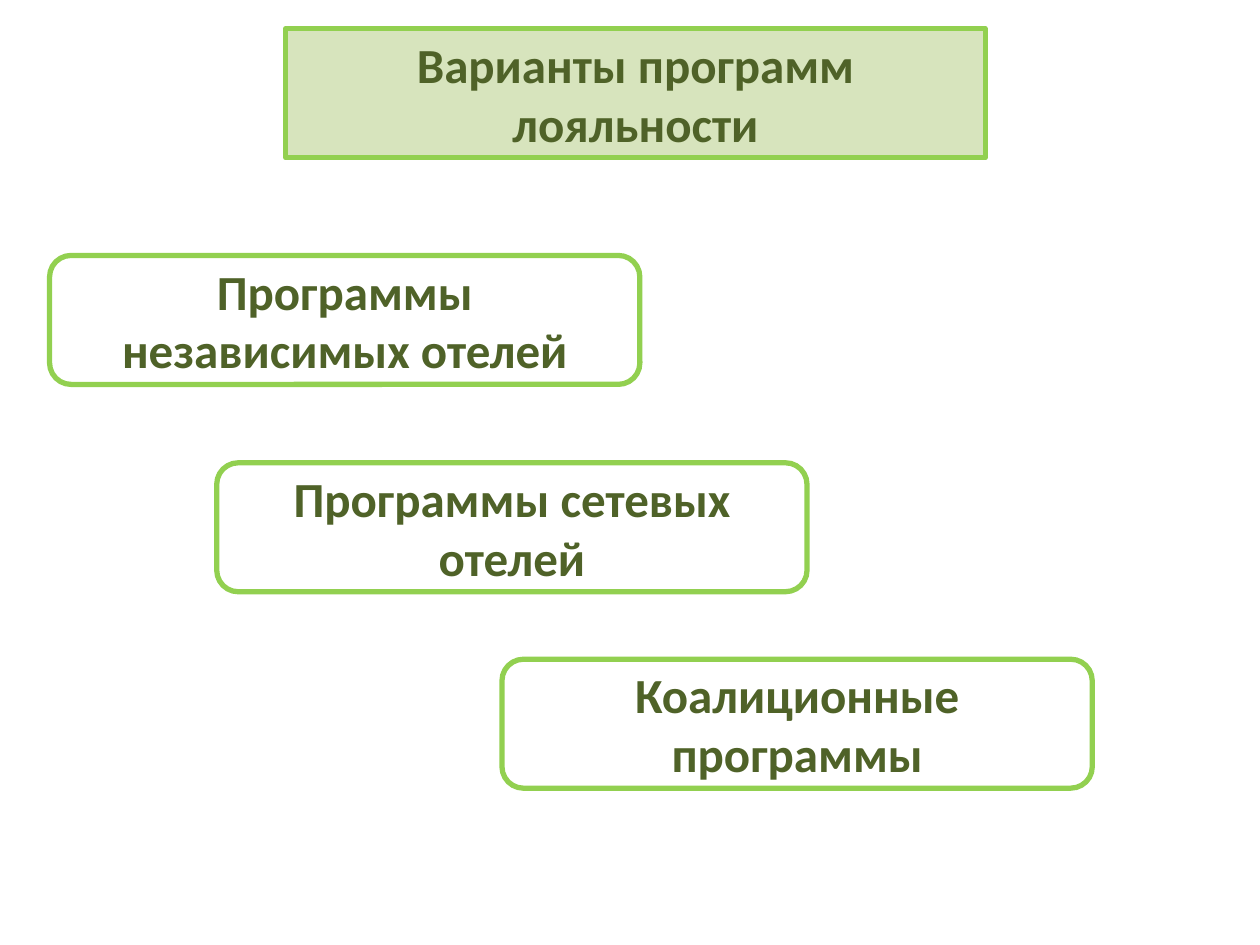
from dataclasses import dataclass

from lxml.etree import SubElement
from pptx import Presentation
from pptx.dml.color import RGBColor
from pptx.enum.shapes import MSO_SHAPE
from pptx.enum.text import MSO_ANCHOR, MSO_AUTO_SIZE, PP_ALIGN
from pptx.oxml.ns import qn
from pptx.util import Cm, Pt


@dataclass(frozen=True)
class Theme:
    font: str = "Calibri"
    text_size: float = 28
    line_width: float = 3
    text: str = "4F6228"
    outline: str = "92D050"
    heading_fill: str = "D7E4BD"


class SlideBuilder:
    def __init__(self, slide, theme):
        self.slide = slide
        self.theme = theme

    def heading(self, text, left, top, width, height):
        title = self.slide.shapes.title
        title.left, title.top = Cm(left), Cm(top)
        title.width, title.height = Cm(width), Cm(height)
        geometry = SubElement(title.element.spPr, qn("a:prstGeom"), prst="roundRect")
        SubElement(geometry, qn("a:avLst"))
        title.fill.solid()
        title.fill.fore_color.rgb = RGBColor.from_string(self.theme.heading_fill)
        self.style(title, text)

    def card(self, text, left, top, width, height):
        card = self.slide.shapes.add_shape(
            MSO_SHAPE.ROUNDED_RECTANGLE, Cm(left), Cm(top), Cm(width), Cm(height)
        )
        card.shadow.inherit = False
        card.fill.background()
        self.style(card, text)

    def style(self, box, text):
        box.line.color.rgb = RGBColor.from_string(self.theme.outline)
        box.line.width = Pt(self.theme.line_width)
        frame = box.text_frame
        frame.text = text
        frame.word_wrap = True
        frame.auto_size = MSO_AUTO_SIZE.NONE
        frame.vertical_anchor = MSO_ANCHOR.MIDDLE
        paragraph = frame.paragraphs[0]
        paragraph.alignment = PP_ALIGN.CENTER
        font = paragraph.runs[0].font
        font.name = self.theme.font
        font.size = Pt(self.theme.text_size)
        font.bold = True
        font.color.rgb = RGBColor.from_string(self.theme.text)


def main():
    presentation = Presentation()
    presentation.slide_width, presentation.slide_height = Cm(25.4), Cm(19.05)
    title_only = presentation.slide_layouts[5]
    builder = SlideBuilder(presentation.slides.add_slide(title_only), Theme())

    box_height = 2.6
    program_width = 11.9
    programs = [
        ("Программы независимых отелей", 1, 5.15),
        ("Программы сетевых отелей", 4.37, 9.33),
        ("Коалиционные программы", 10.12, 13.29),
    ]

    builder.heading("Варианты программ лояльности", 5.76, 0.58, 14.1, box_height)
    for program, left, top in programs:
        builder.card(program, left, top, program_width, box_height)

    presentation.save("out.pptx")


if __name__ == "__main__":
    main()
